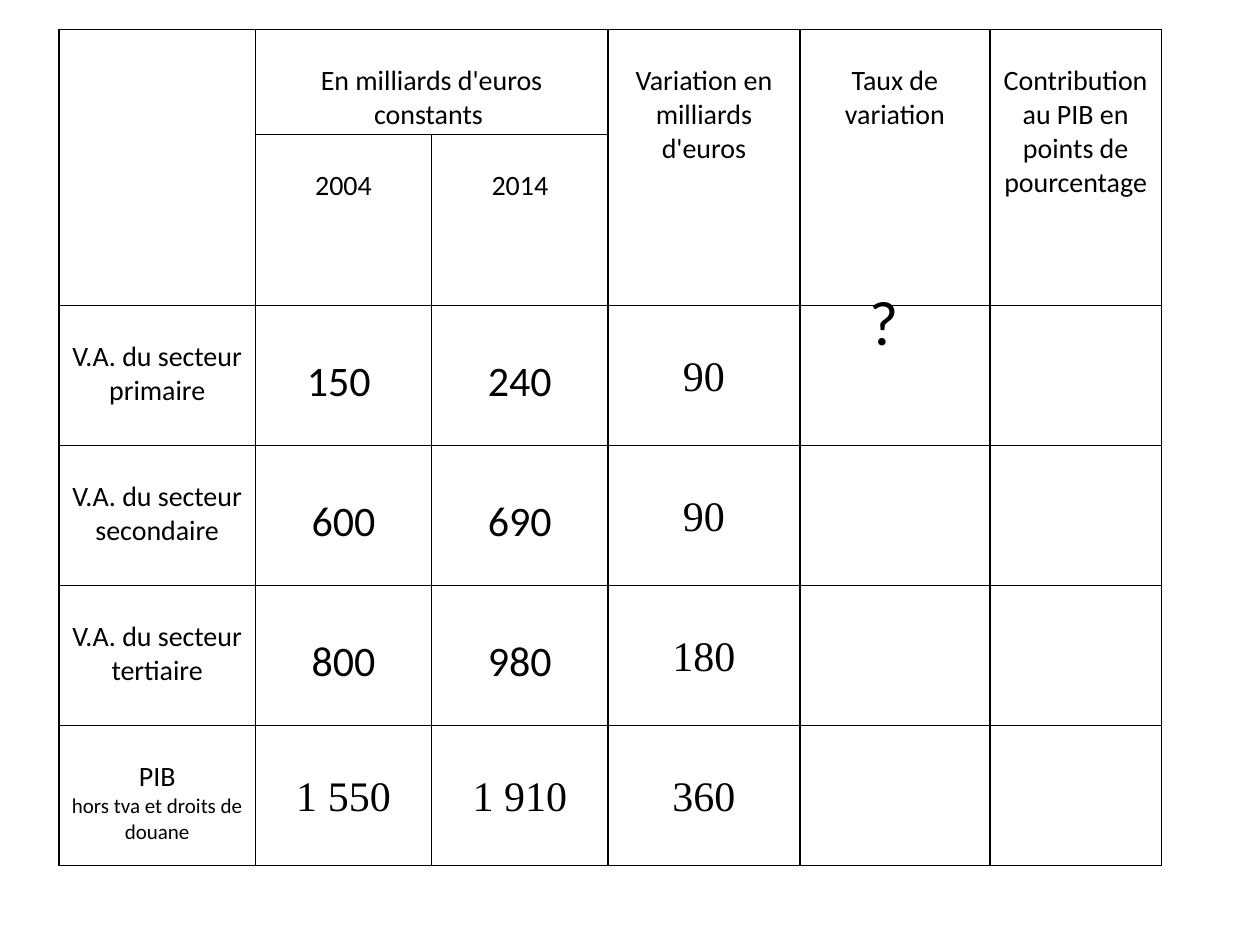
from dataclasses import dataclass

import lxml.etree
import pptx
import pptx.dml.color
import pptx.enum.text
import pptx.oxml.ns
import pptx.table
import pptx.util

Pt = pptx.util.Pt
BLACK = pptx.dml.color.RGBColor(0x00, 0x00, 0x00)
SANS = "Calibri"
SERIF = "Times New Roman"
LABEL_SIZE = 16
NOTE_SIZE = 12
VALUE_SIZE = 24
LINE_HEIGHT = {SANS: 1.22, SERIF: 1.15}
SIDE_MARGIN = Pt(5.4)
COLUMN_WIDTHS = (112.1, 100.8, 100.8, 109.6, 108.6, 98)
ROW_HEIGHTS = (60, 60, 80, 80, 80, 80)


@dataclass(frozen=True)
class Entry:
    row: int
    column: int
    text: str
    size: int = LABEL_SIZE
    font: str = SANS
    row_span: int = 1
    column_span: int = 1
    note: str = ""


@dataclass(frozen=True)
class Sector:
    label: str
    value_2004: str
    value_2014: str
    variation: str
    font: str = SANS
    note: str = ""


HEADINGS = (
    Entry(0, 0, "", row_span=2),
    Entry(0, 1, "En milliards d'euros constants ", column_span=2),
    Entry(0, 3, "Variation en milliards d'euros", row_span=2),
    Entry(0, 4, "Taux de variation", row_span=2),
    Entry(0, 5, "Contribution au PIB en points de pourcentage", row_span=2),
    Entry(1, 1, "2004"),
    Entry(1, 2, "2014"),
)
SECTORS = (
    Sector("V.A. du secteur primaire", "150 ", "240", "90"),
    Sector("V.A. du secteur secondaire", "600", "690", "90"),
    Sector("V.A. du secteur tertiaire", "800", "980", "180"),
    Sector("PIB", "1 550", "1 910", "360", SERIF, "hors tva et droits de douane"),
)


def sector_entries(row: int, sector: Sector) -> tuple[Entry, ...]:
    return (
        Entry(row, 0, sector.label, note=sector.note),
        Entry(row, 1, sector.value_2004, VALUE_SIZE, sector.font),
        Entry(row, 2, sector.value_2014, VALUE_SIZE, sector.font),
        Entry(row, 3, sector.variation, VALUE_SIZE, SERIF),
    )


def format_runs(paragraph, size: int, font: str) -> None:
    for run in paragraph.runs:
        run.font.size = Pt(size)
        run.font.name = font
        run.font.color.rgb = BLACK


def outline_cell(cell) -> None:
    properties = cell._tc.get_or_add_tcPr()
    qn = pptx.oxml.ns.qn
    for side in ("a:lnL", "a:lnR", "a:lnT", "a:lnB"):
        border = lxml.etree.SubElement(properties, qn(side), w=str(Pt(1)))
        fill = lxml.etree.SubElement(border, qn("a:solidFill"))
        lxml.etree.SubElement(fill, qn("a:srgbClr"), val=str(BLACK))
    cell.fill.background()


def write_entry(table: pptx.table.Table, entry: Entry) -> None:
    cell = table.cell(entry.row, entry.column)
    if entry.row_span > 1 or entry.column_span > 1:
        cell.merge(table.cell(entry.row + entry.row_span - 1,
                              entry.column + entry.column_span - 1))
    if not entry.text:
        return
    cell.margin_left = cell.margin_right = SIDE_MARGIN
    cell.margin_top = Pt(entry.size * LINE_HEIGHT[entry.font])
    cell.margin_bottom = 0
    label = cell.text_frame.paragraphs[0]
    label.text = entry.text
    label.alignment = pptx.enum.text.PP_ALIGN.CENTER
    format_runs(label, entry.size, entry.font)
    if entry.note:
        note = cell.text_frame.add_paragraph()
        note.text = entry.note
        note.alignment = pptx.enum.text.PP_ALIGN.CENTER
        format_runs(note, NOTE_SIZE, entry.font)


def add_accounts(slide) -> None:
    table = slide.shapes.add_table(
        len(ROW_HEIGHTS), len(COLUMN_WIDTHS), Pt(33.8), Pt(16.8),
        Pt(sum(COLUMN_WIDTHS)), Pt(sum(ROW_HEIGHTS))).table
    table.first_row = False
    table.horz_banding = False
    for column, width in zip(table.columns, COLUMN_WIDTHS):
        column.width = Pt(width)
    for row, height in zip(table.rows, ROW_HEIGHTS):
        row.height = Pt(height)
    for cell in table.iter_cells():
        outline_cell(cell)
    for heading in HEADINGS:
        write_entry(table, heading)
    for row, sector in enumerate(SECTORS, start=2):
        for entry in sector_entries(row, sector):
            write_entry(table, entry)


def add_question(slide) -> None:
    question = slide.shapes.add_textbox(Pt(489.6), Pt(157.7), Pt(61.9), Pt(51.1))
    frame = question.text_frame
    frame.word_wrap = True
    frame.auto_size = pptx.enum.text.MSO_AUTO_SIZE.SHAPE_TO_FIT_TEXT
    frame.text = "?"
    format_runs(frame.paragraphs[0], 36, SANS)


def main() -> None:
    presentation = pptx.Presentation()
    presentation.slide_width = Pt(720)
    presentation.slide_height = Pt(540)
    slide = presentation.slides.add_slide(presentation.slide_layouts[6])
    add_accounts(slide)
    add_question(slide)
    presentation.save("out.pptx")


if __name__ == "__main__":
    main()
